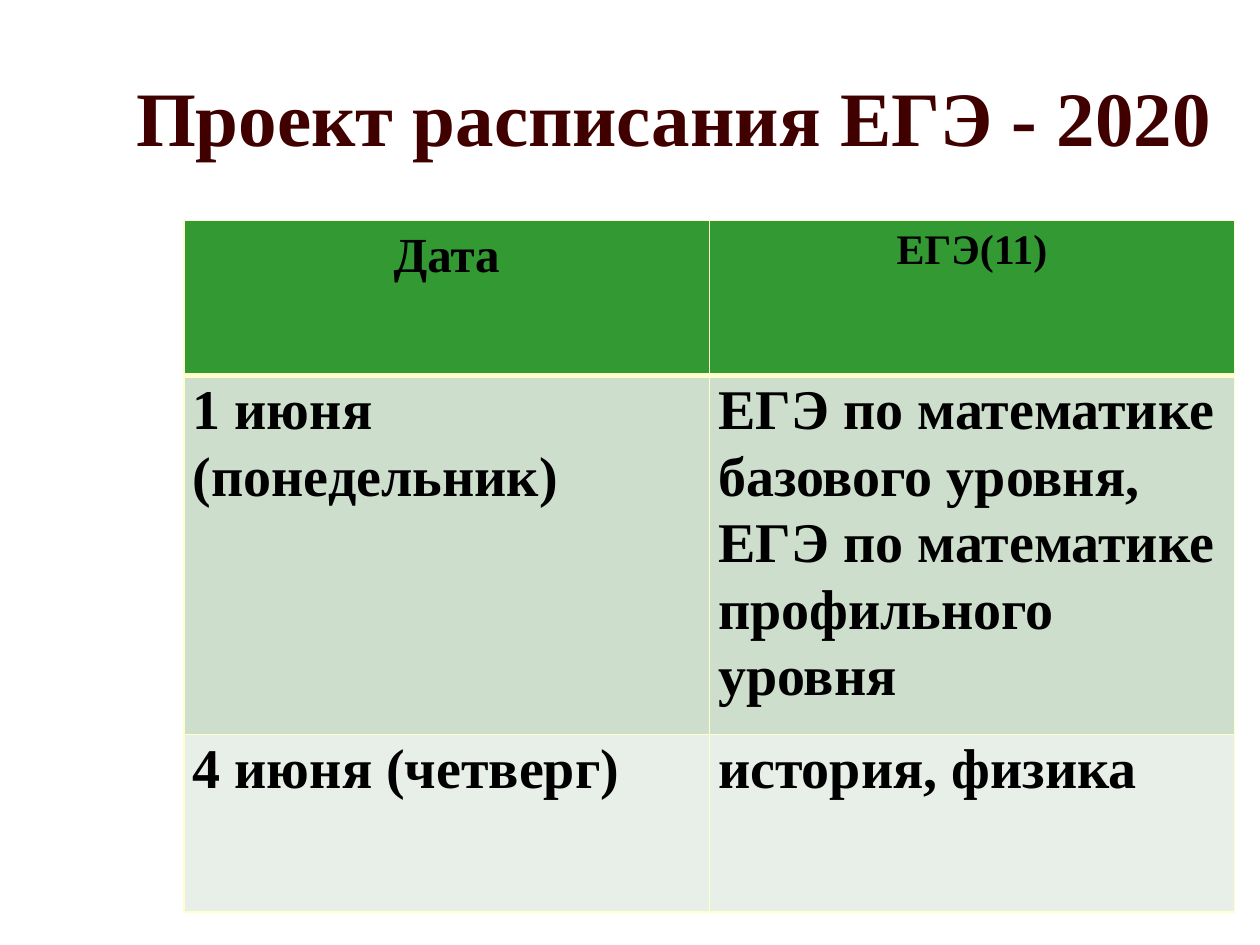
from dataclasses import dataclass

from lxml.etree import SubElement
from pptx import Presentation
from pptx.dml.color import RGBColor as Rgb
from pptx.enum.text import MSO_ANCHOR as Anchor, MSO_AUTO_SIZE as AutoSize, PP_ALIGN as Align
from pptx.oxml.ns import qn
from pptx.util import Inches, Pt

TITLE = "Проект расписания ЕГЭ - 2020"
HEADER = ("Дата", "ЕГЭ(11)")
EXAMS = [
    ("1 июня (понедельник)",
     "ЕГЭ по математике базового уровня, ЕГЭ по математике профильного уровня"),
    ("4 июня (четверг)", "история, физика"),
]


@dataclass(frozen=True)
class Theme:
    font: str = "Times New Roman"
    white: str = "FFFFFF"
    title: str = "400000"
    text: str = "000000"
    border: str = "FFFFCC"
    row_fills: tuple = ("339933", "CDDECD", "E8EFE8")
    title_size: int = 44
    header_sizes: tuple = (28, 24)
    body_size: int = 32
    thin: int = 1
    thick: int = 3


THEME = Theme()
SLIDE_W, SLIDE_H = 10, 7.5
TITLE_BOX = (0.43, 0.3, 9.29, 1.24)
TABLE_LEFT, TABLE_TOP, TABLE_W = 1.46, 1.75, 8.34
ROW_HEIGHTS = (1.23, 2.85, 1.41)


def write(frame, text, size, color=THEME.text, align=Align.LEFT, spacing=1.0):
    paragraph = frame.paragraphs[0]
    paragraph.alignment = align
    paragraph.line_spacing = spacing
    run = paragraph.add_run()
    run.text = text
    run.font.name = THEME.font
    run.font.size = Pt(size)
    run.font.bold = True
    run.font.color.rgb = Rgb.from_string(color)


def paint(fill, color):
    fill.solid()
    fill.fore_color.rgb = Rgb.from_string(color)


def set_borders(cell, **widths):
    properties = cell._tc.get_or_add_tcPr()
    for position, (side, width) in enumerate(widths.items()):
        line = properties.makeelement(qn(f"a:ln{side}"), {"w": str(Pt(width))})
        color = SubElement(SubElement(line, qn("a:solidFill")), qn("a:srgbClr"))
        color.set("val", THEME.border)
        properties.insert(position, line)


def add_title(slide):
    title = slide.shapes.title
    title.left, title.top, title.width, title.height = map(Inches, TITLE_BOX)
    paint(title.fill, THEME.white)
    paint(title.line.fill, THEME.white)
    title.line.width = Pt(1.5)
    frame = title.text_frame
    frame.auto_size = AutoSize.NONE
    frame.vertical_anchor = Anchor.MIDDLE
    write(frame, TITLE, THEME.title_size, color=THEME.title, align=Align.RIGHT)


def add_schedule(slide):
    rows = [HEADER, *EXAMS]
    schedule = slide.shapes.add_table(
        len(rows), len(HEADER), Inches(TABLE_LEFT), Inches(TABLE_TOP),
        Inches(TABLE_W), Inches(sum(ROW_HEIGHTS))).table
    for row_index, row in enumerate(rows):
        schedule.rows[row_index].height = Inches(ROW_HEIGHTS[row_index])
        is_header = row_index == 0
        top = THEME.thick if row_index == 1 else THEME.thin
        bottom = THEME.thick if is_header else THEME.thin
        for column, text in enumerate(row):
            cell = schedule.cell(row_index, column)
            cell.margin_left = cell.margin_right = Inches(0.07)
            cell.margin_top = cell.margin_bottom = 0
            paint(cell.fill, THEME.row_fills[row_index])
            set_borders(cell, L=THEME.thin, R=THEME.thin, T=top, B=bottom)
            write(cell.text_frame, text,
                  THEME.header_sizes[column] if is_header else THEME.body_size,
                  align=Align.CENTER if is_header else Align.LEFT,
                  spacing=1.15 if is_header else 1.07)


def main():
    deck = Presentation()
    deck.slide_width, deck.slide_height = Inches(SLIDE_W), Inches(SLIDE_H)
    slide = deck.slides.add_slide(deck.slide_layouts[5])
    add_title(slide)
    add_schedule(slide)
    deck.save("out.pptx")


if __name__ == "__main__":
    main()
